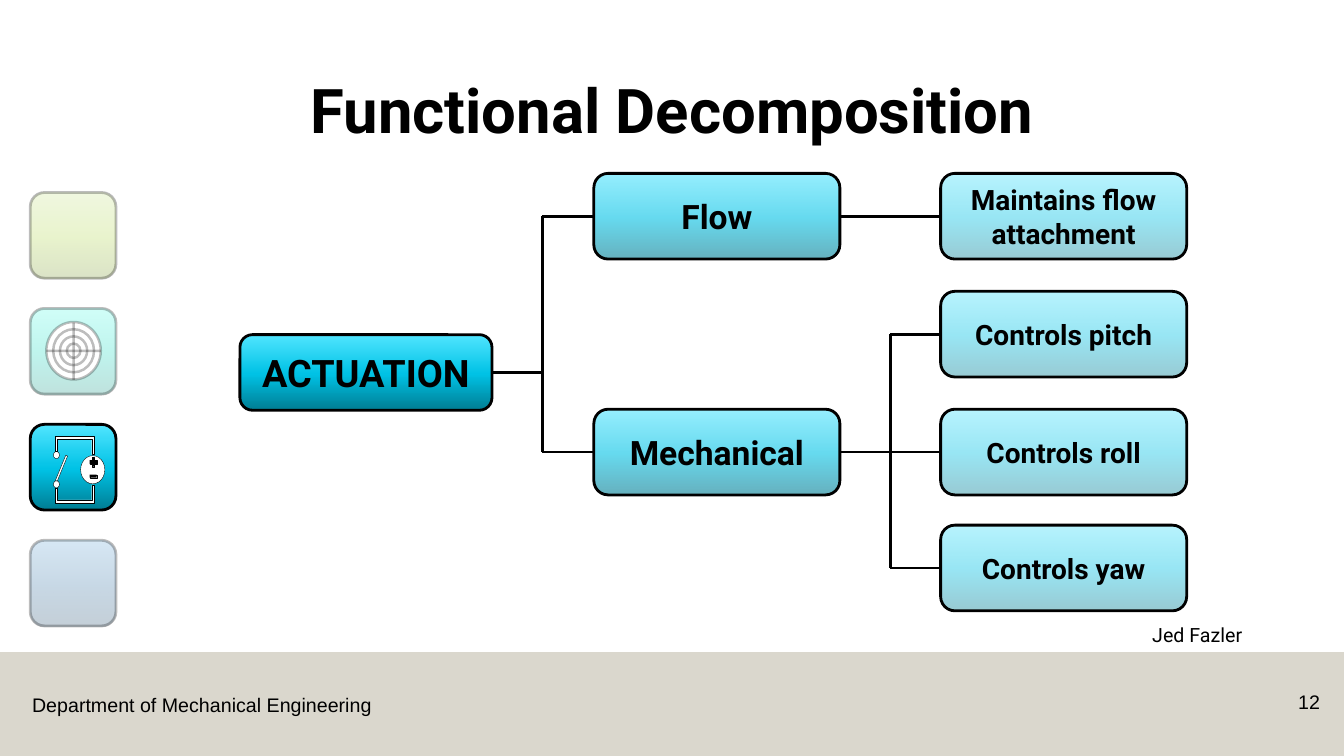
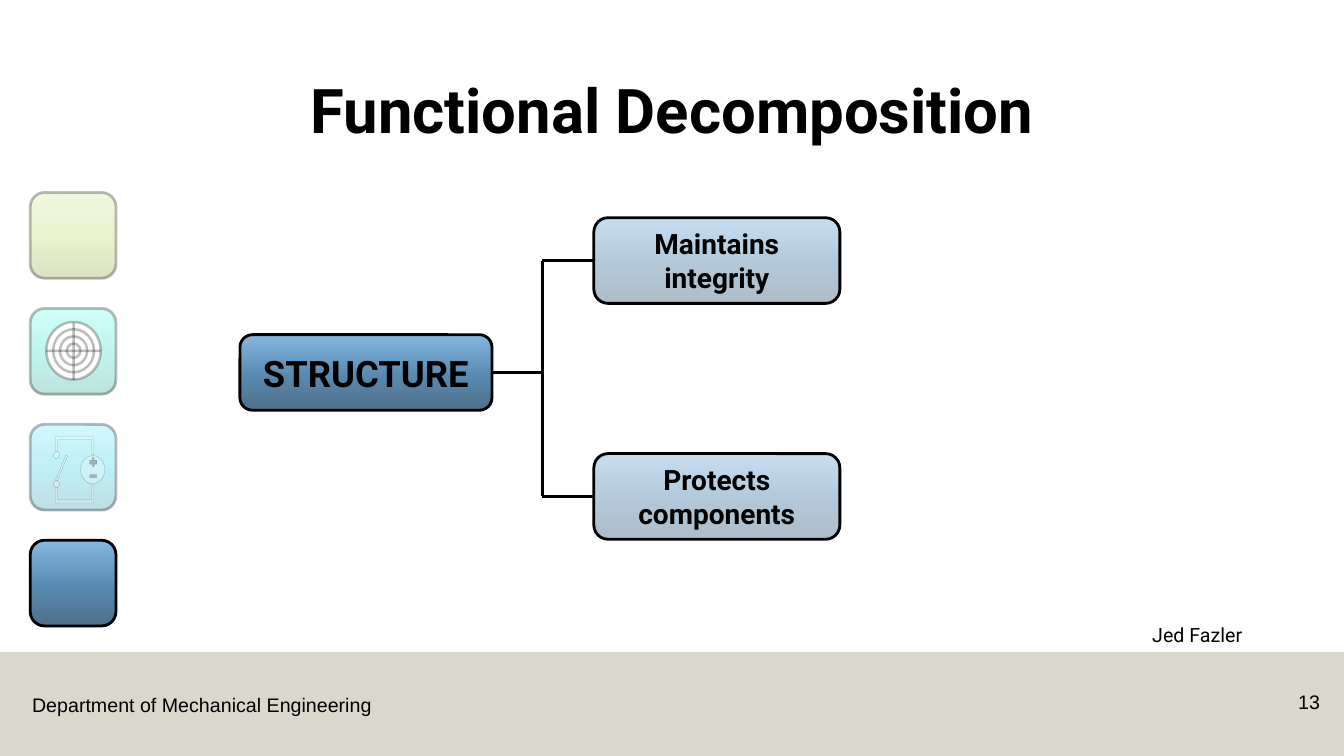
"""Build two functional decomposition slides with tree charts and side icons."""
from copy import deepcopy

from lxml.etree import SubElement
from pptx import Presentation
from pptx.dml.color import RGBColor
from pptx.enum.shapes import MSO_CONNECTOR, MSO_SHAPE
from pptx.enum.text import MSO_ANCHOR, PP_ALIGN
from pptx.oxml.ns import qn
from pptx.util import Inches, Pt

ink = RGBColor.from_string
BLACK, WHITE, SAND = "000000", "FFFFFF", "B7B09C"
GREEN = ("6F8F20", "A7D339", "C8E485")
TEAL = ("008B79", "00D8BC", "49FFE7")
CYAN = ("007D93", "00C2E5", "51E5FF")
BLUE = ("174162", "25669A", "60A3D9")
TILES = (GREEN, TEAL, CYAN, BLUE)
LEFT, MID, RIGHT = PP_ALIGN.LEFT, PP_ALIGN.CENTER, PP_ALIGN.RIGHT


def paint(shape, tones, alpha=100, width=2, fade=100):
    """Set fill, outline and opacity; no tones means a connector."""
    props = shape.element.spPr
    if len(tones) == 3:
        shape.fill.gradient()
        shape.fill.gradient_angle = 90
        stops = props.find(".//" + qn("a:gsLst"))
        stops.append(deepcopy(stops[-1]))
        for stop, place, tone in zip(shape.fill.gradient_stops, (0, 0.48, 1), tones):
            stop.position = place
            stop.color.rgb = ink(tone)
    elif tones:
        shape.fill.solid()
        shape.fill.fore_color.rgb = ink(tones[0])
    if alpha < 100:
        for tint in props.iter(qn("a:srgbClr")):
            SubElement(tint, qn("a:alpha"), val=str(alpha * 1000))
    if width:
        shape.line.width = Pt(width)
        shape.line.fill.solid()
        shape.line.fill.fore_color.rgb = ink(BLACK)
        if fade < 100:
            for tint in props.find(qn("a:ln")).iter(qn("a:srgbClr")):
                SubElement(tint, qn("a:alpha"), val=str(fade * 1000))
    else:
        shape.line.fill.background()
    if tones:
        shape.shadow.inherit = False
    else:
        SubElement(props, qn("a:effectLst"))


def write(shape, text, size, font="Roboto", bold=False, align=MID, space=1.0):
    """Put one styled run into a shape."""
    frame = shape.text_frame
    frame.word_wrap = True
    frame.vertical_anchor = MSO_ANCHOR.MIDDLE
    para = frame.paragraphs[0]
    para.alignment = align
    para.line_spacing = space
    run = para.add_run()
    run.text = text
    run.font.size = Pt(size)
    run.font.name = font
    run.font.bold = bold
    run.font.color.rgb = ink(BLACK)


COLUMNS = ((2.38, 2.5, 0.75), (5.89, 2.44, 0.85), (9.33, 2.44, 0.85))
STUB = 0.5

# Each node: text, size, column, top, opacity, parent
PAGES = (
    (12, 2, 100, (
        ("ACTUATION", 27, 0, 3.32, 100, None),
        ("Flow", 24, 1, 1.72, 60, 0),
        ("Mechanical", 24, 1, 4.06, 60, 0),
        ("Maintains flow attachment", 20, 2, 1.72, 40, 1),
        ("Controls pitch", 20, 2, 2.89, 40, 2),
        ("Controls roll", 20, 2, 4.06, 40, 2),
        ("Controls yaw", 20, 2, 5.21, 40, 2),
    )),
    (13, 3, 75, (
        ("STRUCTURE", 26, 0, 3.32, 75, None),
        ("Maintains integrity", 20, 1, 2.16, 35, 0),
        ("Protects components", 20, 1, 4.5, 35, 0),
    )),
)
WIRE = ((55, 433), (93, 433), (93, 451), (91, 451),
        (91, 436), (57, 436), (57, 448), (55, 448))
PARTS = (
    (MSO_SHAPE.OVAL, 0.53, 4.48, 0.06, 0.07, WHITE, 0),
    (MSO_SHAPE.OVAL, 0.53, 4.77, 0.06, 0.07, WHITE, 0),
    (MSO_SHAPE.OVAL, 0.8, 4.52, 0.24, 0.28, WHITE, 0),
    (MSO_SHAPE.RECTANGLE, 0.89, 4.71, 0.07, 0.03, BLACK, 0),
    (MSO_SHAPE.CROSS, 0.89, 4.54, 0.07, 0.09, BLACK, 0),
    (MSO_SHAPE.RECTANGLE, 0.6, 4.51, 0.02, 0.27, WHITE, 22.4),
)

deck = Presentation()
deck.slide_width, deck.slide_height = Inches(13.33), Inches(7.5)

for number, active, strength, nodes in PAGES:
    shapes = deck.slides.add_slide(deck.slide_layouts[6]).shapes

    band = shapes.add_shape(MSO_SHAPE.RECTANGLE, 0, Inches(6.47), Inches(13.33), Inches(1.03))
    paint(band, (SAND,), 50, 0)
    for text, spot, size, font, bold, align, space in (
        ("Department of Mechanical Engineering", (0.22, 6.82, 4, 0.34), 14, "Arial", False, LEFT, 1.0),
        ("Functional Decomposition", (0.92, 0.4, 11.5, 1.45), 44, "Roboto", True, MID, 0.9),
        ("Jed Fazler", (11.33, 6.14, 2, 0.34), 14, "Roboto", False, LEFT, 0.9),
        (str(number), (12.42, 6.79, 0.77, 0.34), 14, "Arial", False, RIGHT, 1.0),
    ):
        box = shapes.add_textbox(*map(Inches, spot))
        write(box, text, size, font, bold, align, space)

    boxes = []
    for text, size, column, top, alpha, _ in nodes:
        left, width, height = COLUMNS[column]
        box = shapes.add_shape(MSO_SHAPE.ROUNDED_RECTANGLE, *map(Inches, (left, top, width, height)))
        paint(box, TILES[active], alpha)
        write(box, text, size, bold=True)
        boxes.append(box)

    for index, root in enumerate(boxes):
        kids = [box for box, node in zip(boxes, nodes) if node[5] == index]
        if not kids:
            continue
        end = root.left + root.width
        spine = end + Inches(STUB)
        level = root.top + root.height // 2
        rows = [kid.top + kid.height // 2 for kid in kids]
        if len(kids) == 1:
            links = [(end, level, kids[0].left, rows[0], root, kids[0])]
        else:
            links = [(end, level, spine, level, root, None),
                     (spine, rows[0], spine, rows[-1], None, None)]
            links += [(spine, row, kid.left, row, None, kid) for kid, row in zip(kids, rows)]
        for *ends, start, stop in links:
            link = shapes.add_connector(MSO_CONNECTOR.STRAIGHT, *ends)
            if start:
                link.begin_connect(start, 3)
            if stop:
                link.end_connect(stop, 1)
            paint(link, ())

    for index, tones in enumerate(TILES):
        tile = shapes.add_shape(MSO_SHAPE.ROUNDED_RECTANGLE, Inches(0.3),
                                Inches(1.91 + 1.15 * index), Inches(0.85), Inches(0.85))
        on = index == active
        paint(tile, tones, strength if on else 25, fade=100 if on else 25)

    target = shapes.add_group_shape().shapes
    for ring in (4, 3, 2, 1):
        width, height = 0.54 * ring / 4, 0.57 * ring / 4
        disc = target.add_shape(MSO_SHAPE.OVAL, Inches(0.73 - width / 2), Inches(3.48 - height / 2),
                                Inches(width), Inches(height))
        paint(disc, (WHITE,), 100, 1.78, 25)
    for ends in ((0.73, 3.2, 0.73, 3.77), (0.46, 3.48, 1, 3.48)):
        hair = target.add_connector(MSO_CONNECTOR.STRAIGHT, *map(Inches, ends))
        paint(hair, (), 100, 1.78, 25)

    shade = 100 if active == 2 else 25
    circuit = shapes.add_group_shape().shapes
    for kind, left, top, width, height, tone, turn in PARTS:
        part = circuit.add_shape(kind, *map(Inches, (left, top, width, height)))
        part.rotation = turn
        if kind == MSO_SHAPE.CROSS:
            part.adjustments[0] = 0.36
        paint(part, (tone,), shade, 0.25, shade)
    for points in (WIRE, [(x, 932 - y) for x, y in WIRE]):
        pen = circuit.build_freeform(*points[0], scale=Inches(0.01))
        pen.add_line_segments(points[1:], close=True)
        paint(pen.convert_to_shape(), (WHITE,), shade, 0.25, shade)

deck.save("out.pptx")
